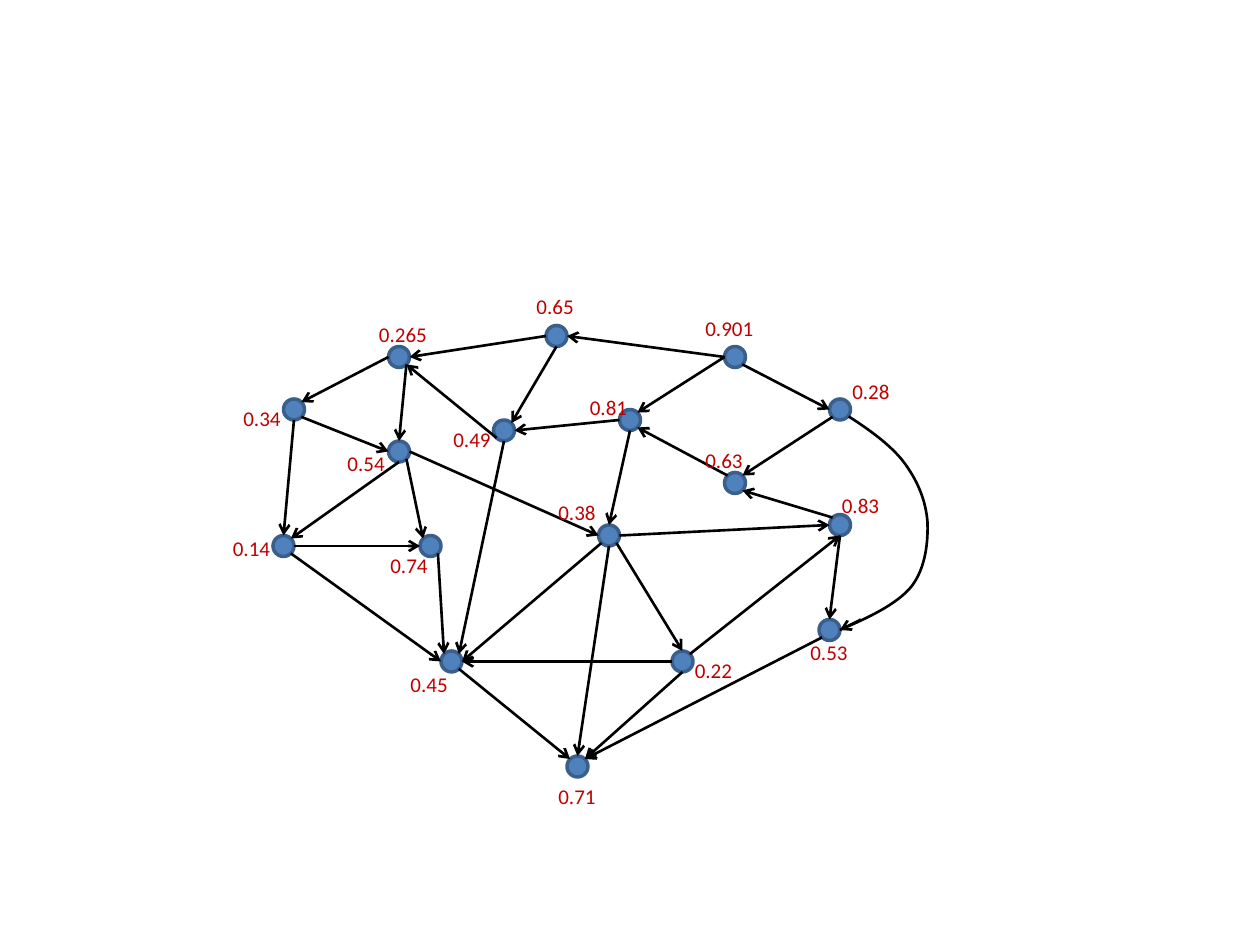
from math import cos, pi, sin

from lxml.etree import SubElement
from pptx import Presentation
from pptx.dml.color import RGBColor
from pptx.enum.shapes import MSO_CONNECTOR as Connector, MSO_SHAPE as Shape
from pptx.enum.text import MSO_AUTO_SIZE as AutoSize
from pptx.oxml.ns import qn
from pptx.util import Pt

BLUE = RGBColor(0x4F, 0x81, 0xBD)
DARK_BLUE = RGBColor(0x3A, 0x5F, 0x8C)
BLACK = RGBColor(0, 0, 0)
RED = RGBColor(0xC0, 0, 0)

# Connection sites of an ellipse, counterclockwise from the top
SITES = ["T", "TL", "L", "BL", "B", "BR", "R", "TR"]

# value: (node left, node top, label left, label top)
NODES = {
    "0.34": (162, 228, 132, 228),
    "0.265": (222, 198, 209.5, 180),
    "0.65": (312, 186, 299.5, 164),
    "0.74": (240, 306, 216, 312),
    "0.54": (222, 252, 191.5, 254),
    "0.14": (156, 306, 126, 302.5),
    "0.49": (282, 240, 252, 240),
    "0.81": (354, 234, 330, 222),
    "0.38": (342, 300, 312, 282),
    "0.83": (474, 294, 474, 278),
    "0.28": (474, 228, 480, 212.5),
    "0.901": (414, 198, 396, 176.5),
    "0.63": (414, 270, 396, 252),
    "0.45": (252, 372, 227.5, 380),
    "0.22": (384, 372, 390, 372),
    "0.53": (468, 354, 456, 362),
    "0.71": (324, 432, 312, 444),
}

# from node, site, to node, site
EDGES = """
0.265 L 0.34 TR
0.65 L 0.265 R
0.901 L 0.81 TR
0.901 BR 0.28 L
0.28 BL 0.63 TR
0.901 L 0.65 R
0.63 TL 0.81 BR
0.81 L 0.49 R
0.65 B 0.49 TR
0.265 BR 0.54 T
0.49 BL 0.265 BR
0.81 B 0.38 T
0.22 TR 0.83 B
0.38 BR 0.22 T
0.38 R 0.83 L
0.83 TL 0.63 BR
0.49 B 0.45 TR
0.38 BL 0.45 R
0.22 L 0.45 R
0.53 BL 0.71 TR
0.83 B 0.53 T
0.22 B 0.71 TR
0.45 BR 0.71 TL
0.14 R 0.74 L
0.34 BR 0.54 L
0.34 B 0.14 T
0.54 BR 0.74 TL
0.54 R 0.38 L
0.74 BR 0.45 TL
0.38 B 0.71 T
0.14 BR 0.45 L
0.54 B 0.14 TR
"""

# Start point, then two control points and an end point for each segment
DETOUR = [
    (485, 238),
    (497.5, 246), (510.5, 255.5), (517.5, 265.5),
    (525, 276), (529, 286.5), (530, 298),
    (530.5, 309.5), (529, 324.5), (521, 335),
    (512.5, 345.5), (496, 353), (480, 360),
]


class GraphSlide:
    diameter = 12
    edge_width = 1.5
    outline_width = 2
    font_name = "Calibri"
    font_size = 12

    def __init__(self, slide):
        self.shapes = slide.shapes
        self.nodes = {}

    def node(self, value, left, top):
        shape = self.shapes.add_shape(
            Shape.OVAL, Pt(left), Pt(top), Pt(self.diameter), Pt(self.diameter))
        shape.shadow.inherit = False
        shape.fill.solid()
        shape.fill.fore_color.rgb = BLUE
        shape.line.color.rgb = DARK_BLUE
        shape.line.width = Pt(self.outline_width)
        self.nodes[value] = shape

    def label(self, text, left, top):
        width = 36 + 6 * (len(text) - 4)
        frame = self.shapes.add_textbox(Pt(left), Pt(top), Pt(width), Pt(22)).text_frame
        frame.word_wrap = False
        frame.auto_size = AutoSize.SHAPE_TO_FIT_TEXT
        run = frame.paragraphs[0].add_run()
        run.text = text
        run.font.name = self.font_name
        run.font.size = Pt(self.font_size)
        run.font.color.rgb = RED

    def site_point(self, value, site):
        """Return the position, in points, of a connection site on a node."""
        node = self.nodes[value]
        radius = self.diameter / 2
        angle = pi / 4 * SITES.index(site)
        return (node.left.pt + radius * (1 - sin(angle)),
                node.top.pt + radius * (1 - cos(angle)))

    def style_line(self, shape):
        shape.line.color.rgb = BLACK
        shape.line.width = Pt(self.edge_width)

    def arrow(self, start, end):
        connector = self.shapes.add_connector(
            Connector.STRAIGHT, *(Pt(length) for length in (*start, *end)))
        self.style_line(connector)
        SubElement(connector.line._get_or_add_ln(), qn("a:tailEnd"), type="arrow")
        SubElement(connector._element.spPr, qn("a:effectLst"))
        return connector

    def edge(self, source, source_site, target, target_site):
        """Draw an arrow that stays attached to both of its nodes."""
        connector = self.arrow(self.site_point(source, source_site),
                               self.site_point(target, target_site))
        links = connector._element.nvCxnSpPr.cNvCxnSpPr
        for tag, value, site in (("a:stCxn", source, source_site),
                                 ("a:endCxn", target, target_site)):
            SubElement(links, qn(tag), id=str(self.nodes[value].shape_id),
                       idx=str(SITES.index(site)))

    def curve(self, points):
        """Draw an open Bézier curve from a start point and triples of points."""
        start, *rest = [(Pt(x), Pt(y)) for x, y in points]
        builder = self.shapes.build_freeform(*start)
        builder.add_line_segments(rest, close=False)
        shape = builder.convert_to_shape()
        shape.shadow.inherit = False
        shape.fill.background()
        self.style_line(shape)
        outline = next(shape._element.iter(qn("a:path")))
        steps = outline.findall(qn("a:lnTo"))
        for first in range(0, len(steps), 3):
            bezier = SubElement(outline, qn("a:cubicBezTo"))
            for step in steps[first:first + 3]:
                bezier.append(step[0])
                outline.remove(step)


def main():
    presentation = Presentation()
    presentation.slide_width = Pt(720)
    presentation.slide_height = Pt(540)
    blank = presentation.slide_layouts[6]
    graph = GraphSlide(presentation.slides.add_slide(blank))

    for value, (left, top, _, _) in NODES.items():
        graph.node(value, left, top)
    for edge in EDGES.strip().splitlines():
        graph.edge(*edge.split())
    graph.curve(DETOUR)
    graph.arrow((492, 354), DETOUR[-1])
    for value, (_, _, left, top) in NODES.items():
        graph.label(value, left, top)

    presentation.save("out.pptx")


if __name__ == "__main__":
    main()
